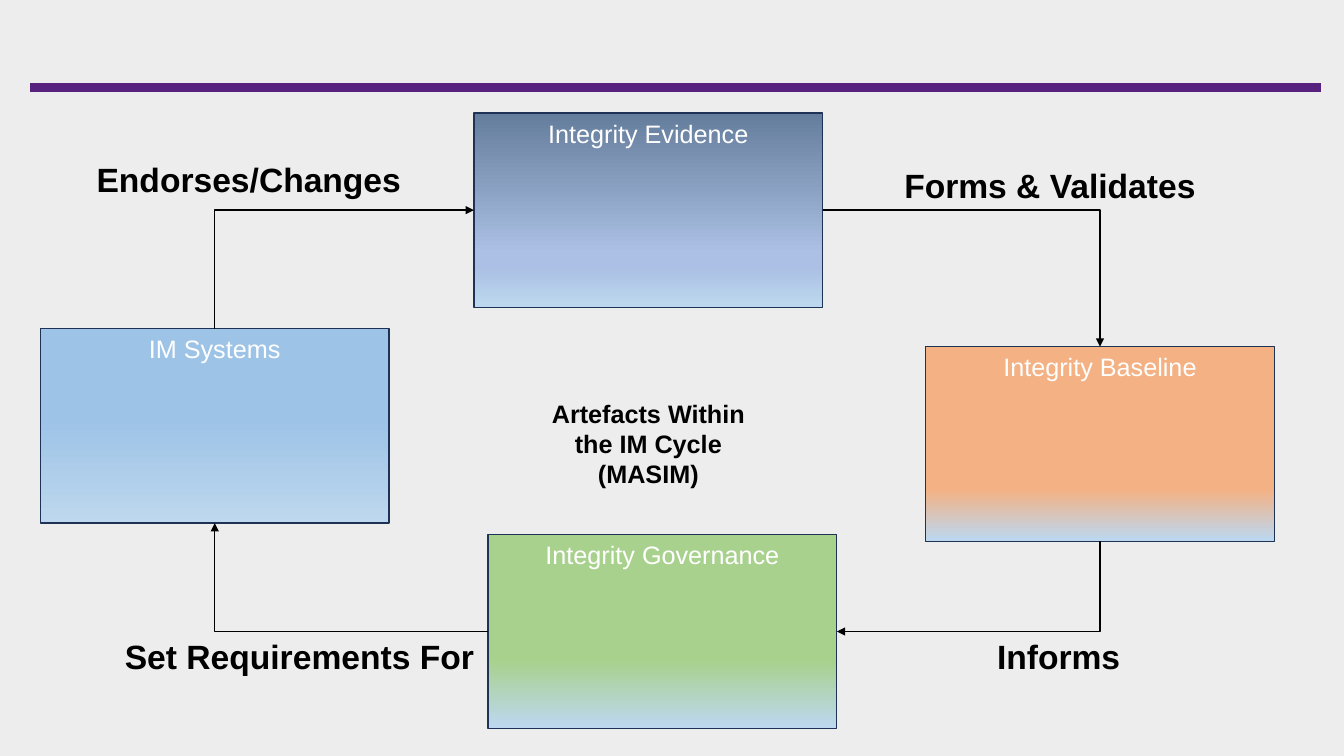
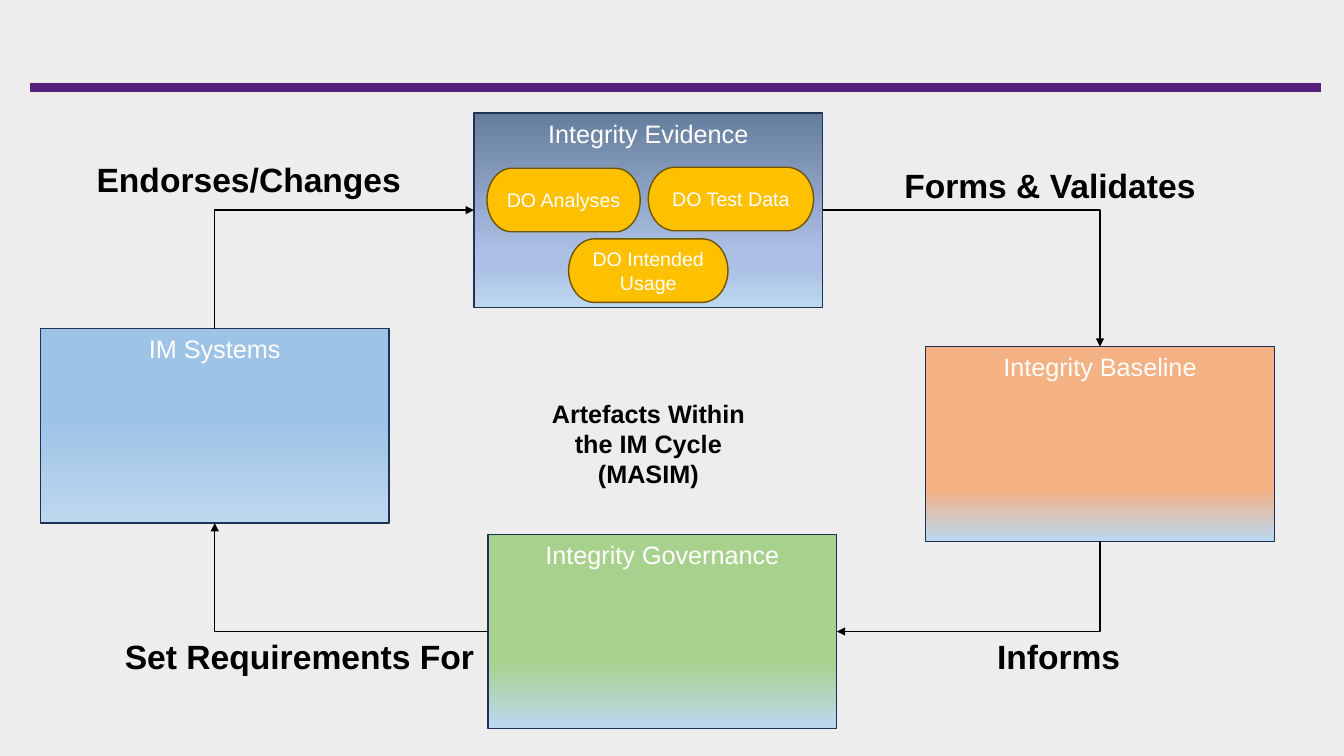
from dataclasses import dataclass

from lxml.etree import SubElement
from pptx import Presentation
from pptx.dml.color import RGBColor
from pptx.enum.shapes import MSO_CONNECTOR, MSO_SHAPE
from pptx.enum.text import MSO_ANCHOR, MSO_AUTO_SIZE, PP_ALIGN
from pptx.oxml.ns import qn
from pptx.util import Inches, Pt


@dataclass(frozen=True)
class Theme:
    font: str = "Arial"
    page: str = "EDEDED"
    band: str = "56227D"
    ink: str = "000000"
    light: str = "FFFFFF"
    edge: str = "1E3256"
    pill: str = "FFC000"
    rim: str = "705400"
    label: int = 24
    head: int = 18
    small: int = 14
    thick: int = 6
    thin: int = 1


THEME = Theme()
WIDE, HIGH = 3.46, 1.93
TOP, LEFT, BOTTOM, RIGHT = range(4)

BOXES = {
    "Integrity Evidence": (4.3, 0, [(0, "657D9D"), (72, "ABC0E4"), (79, "ABC0E4"), (99, "BDD7EE")]),
    "Integrity Baseline": (8.78, 2.32, [(73, "F4B183"), (99, "BDD7EE")]),
    "Integrity Governance": (4.44, 4.18, [(65, "A9D18E"), (99, "BDD7EE")]),
    "IM Systems": (0, 2.14, [(46, "9DC3E6"), (99, "BDD7EE")]),
}
LINKS = [
    ("Integrity Evidence", RIGHT, "Integrity Baseline", TOP),
    ("Integrity Baseline", BOTTOM, "Integrity Governance", RIGHT),
    ("Integrity Governance", LEFT, "IM Systems", BOTTOM),
    ("IM Systems", TOP, "Integrity Evidence", LEFT),
]
LABELS = [
    ("Forms & Validates", 8.47, 0.47, 3.31),
    ("Informs", 9.39, 5.14, 3.31),
    ("Set Requirements For", 0.74, 5.14, 4),
    ("Endorses/Changes", 0.46, 0.41, 4),
]
PILLS = [
    ("DO Test Data", 1.73, 0.54, 1.64),
    ("DO Analyses", 0.13, 0.55, 1.52),
    ("DO Intended Usage", 0.94, 1.25, 1.58),
]


def paint(line, color, width):
    line.color.rgb = RGBColor.from_string(color)
    line.width = Pt(width)


def write(shape, text, size, color, align=PP_ALIGN.CENTER, bold=False, anchor=MSO_ANCHOR.TOP):
    frame = shape.text_frame
    frame.word_wrap = True
    frame.vertical_anchor = anchor
    para = frame.paragraphs[0]
    para.text = text
    para.alignment = align
    font = para.font
    font.name, font.size, font.bold = THEME.font, Pt(size), bold
    font.color.rgb = RGBColor.from_string(color)


def note(slide, text, left, top, width, height, size, align):
    box = slide.shapes.add_textbox(Inches(left), Inches(top), Inches(width), Inches(height))
    write(box, text, size, THEME.ink, align, True)
    box.text_frame.auto_size = MSO_AUTO_SIZE.SHAPE_TO_FIT_TEXT


def form(slide, kind, left, top, width, height, edge):
    shape = slide.shapes.add_shape(kind, Inches(left), Inches(top), Inches(width), Inches(height))
    shape.shadow.inherit = False
    paint(shape.line, edge, THEME.thin)
    return shape


def blend(shape, stops):
    shape.fill.gradient()
    shape.fill.gradient_angle = 270
    items = shape._element.spPr.find(qn("a:gradFill")).find(qn("a:gsLst"))
    for item in list(items):
        items.remove(item)
    for place, color in stops:
        stop = SubElement(items, qn("a:gs"), pos=str(place * 1000))
        SubElement(stop, qn("a:srgbClr"), val=color)


def stroke(slide, kind, ends, color, width):
    line = slide.shapes.add_connector(kind, *ends)
    paint(line.line, color, width)
    SubElement(line._element.spPr, qn("a:effectLst"))
    return line


def link(slide, start, side, goal, port):
    line = stroke(slide, MSO_CONNECTOR.ELBOW, (0, 0, 0, 0), THEME.ink, THEME.thin)
    line.begin_connect(start, side)
    line.end_connect(goal, port)
    x, y = line.begin_x, line.begin_y
    run, drop = line.end_x - x, line.end_y - y
    turned = side in (TOP, BOTTOM)
    if turned:
        width, height, flips = abs(drop), abs(run), (drop < 0, run > 0)
    else:
        width, height, flips = abs(run), abs(drop), (run < 0, drop < 0)
    line.left, line.top = x + (run - width) // 2, y + (drop - height) // 2
    line.width, line.height = width, height
    props = line._element.spPr
    frame = props.find(qn("a:xfrm"))
    frame.set("rot", "5400000" if turned else "0")
    for name, flip in zip(("flipH", "flipV"), flips):
        frame.set(name, str(int(flip)))
    props.find(qn("a:prstGeom")).set("prst", "bentConnector2")
    SubElement(props.find(qn("a:ln")), qn("a:tailEnd"), type="triangle")


def cycle(slide, left, top):
    note(slide, "Artefacts Within the IM Cycle (MASIM)", left + 4.84, top + 2.78, 2.38, 1.01,
         THEME.head, PP_ALIGN.CENTER)
    boxes = {}
    for text, (x, y, stops) in BOXES.items():
        box = form(slide, MSO_SHAPE.RECTANGLE, left + x, top + y, WIDE, HIGH, THEME.edge)
        blend(box, stops)
        write(box, text, THEME.head, THEME.light)
        boxes[text] = box
    for start, side, goal, port in LINKS:
        link(slide, boxes[start], side, boxes[goal], port)
    for text, x, y, width in LABELS:
        note(slide, text, left + x, top + y, width, 0.5, THEME.label, PP_ALIGN.LEFT)


def proofs(slide, left, top):
    for text, x, y, width in PILLS:
        pill = form(slide, MSO_SHAPE.FLOWCHART_TERMINATOR, left + x, top + y, width, 0.63, THEME.rim)
        pill.fill.solid()
        pill.fill.fore_color.rgb = RGBColor.from_string(THEME.pill)
        write(pill, text, THEME.small, THEME.light, anchor=MSO_ANCHOR.MIDDLE)


def page(deck):
    slide = deck.slides.add_slide(deck.slide_layouts[6])
    ends = [Inches(n) for n in (0.3, 0.87, 13.1, 0.87)]
    stroke(slide, MSO_CONNECTOR.STRAIGHT, ends, THEME.band, THEME.thick)
    return slide


def main():
    deck = Presentation()
    deck.slide_width, deck.slide_height = Inches(13.33), Inches(7.5)
    back = deck.slide_master.background.fill
    back.solid()
    back.fore_color.rgb = RGBColor.from_string(THEME.page)
    left, top = 0.4, 1.12
    cycle(page(deck), left, top)
    detail = page(deck)
    cycle(detail, left, top)
    x, y, _ = BOXES["Integrity Evidence"]
    proofs(detail, left + x, top + y)
    deck.save("out.pptx")


if __name__ == "__main__":
    main()
